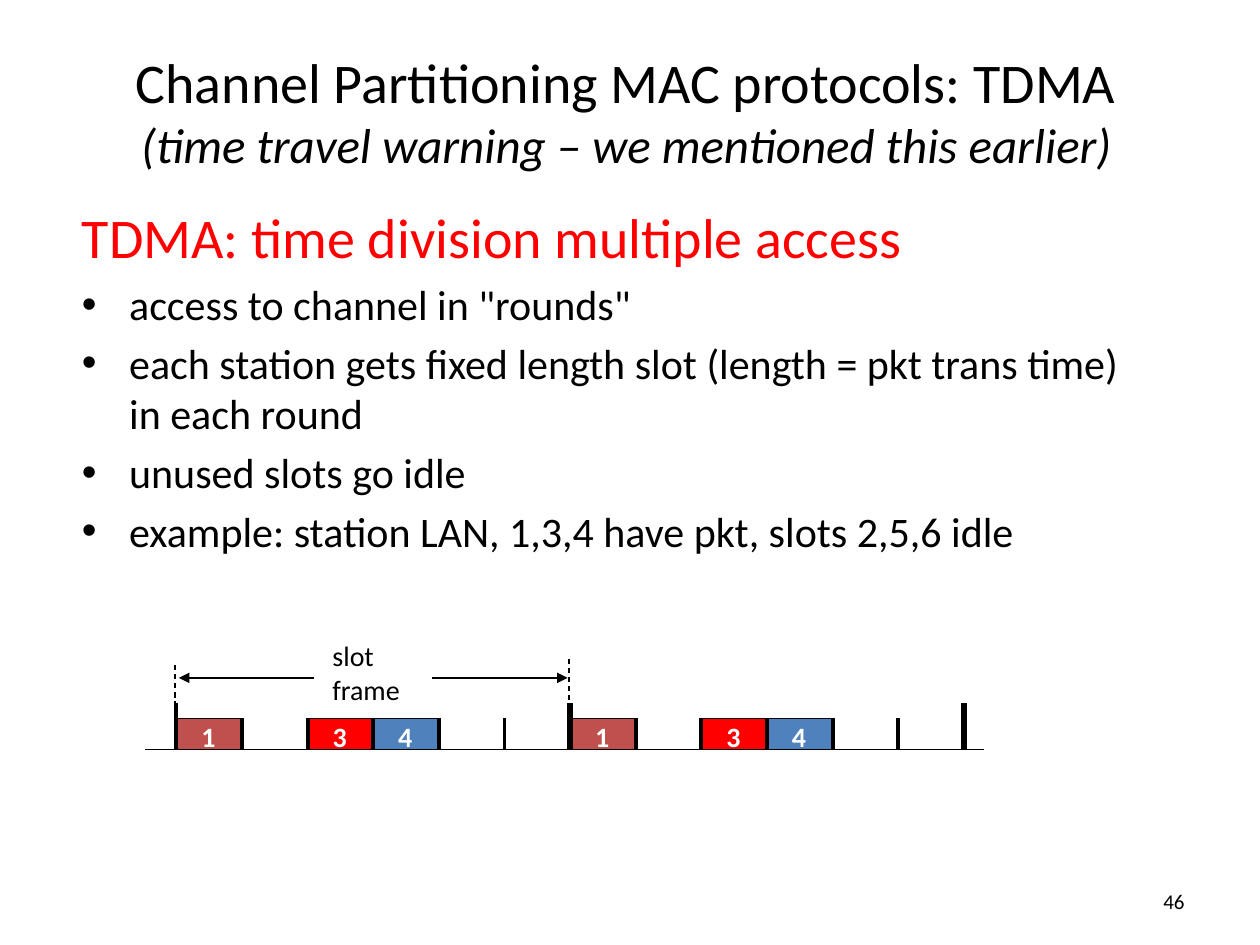
from dataclasses import dataclass

from lxml.etree import SubElement
from pptx import Presentation
from pptx.dml.color import RGBColor as RGB
from pptx.enum.dml import MSO_LINE
from pptx.enum.shapes import MSO_CONNECTOR as CONN, MSO_SHAPE as SHAPE
from pptx.enum.text import MSO_ANCHOR as ANCHOR, MSO_AUTO_SIZE as FIT, PP_ALIGN as ALIGN
from pptx.oxml.ns import qn
from pptx.util import Inches, Pt


@dataclass(frozen=True)
class Theme:
    """Colours, font and type sizes of the slide."""
    font: str = "Calibri"
    ink: RGB = RGB(0, 0, 0)
    white: RGB = RGB(255, 255, 255)
    red: RGB = RGB(255, 0, 0)
    brick: RGB = RGB(0xC0, 0x50, 0x4D)
    blue: RGB = RGB(0x4F, 0x81, 0xBD)
    head: int = 32
    sub: int = 28
    body: int = 24
    label: int = 16
    number: int = 12
    thin: float = 0.75
    tick: float = 2.25
    edge: float = 3


T = Theme()
START, FRAME, SLOTS, ROUNDS = 1.4, 3.125, 6, 2
PITCH = FRAME / SLOTS
BASE, SLOT_H, EDGE_H = 5.95, 0.25, 0.37
BUSY = {1: T.brick, 3: T.red, 4: T.blue}
BULLETS = (
    'access to channel in "rounds"',
    "each station gets fixed length slot (length = pkt trans time) in each round",
    "unused slots go idle",
    "example: station LAN, 1,3,4 have pkt, slots 2,5,6 idle",
)


def slot_x(i):
    """Return the left edge of slot i on the time axis."""
    return START + i * PITCH


def add_run(p, text, size, color=T.ink, bold=None, italic=None):
    """Add one formatted run to a paragraph."""
    r = p.add_run()
    r.text = text
    f = r.font
    f.name, f.size, f.bold, f.italic = T.font, Pt(size), bold, italic
    f.color.rgb = color


def place(sp, x, y, w, h):
    """Move and size a shape in inches."""
    sp.left, sp.top, sp.width, sp.height = map(Inches, (x, y, w, h))


def add_text(s, box, lines, size, color=T.ink, bold=None, align=ALIGN.LEFT, wrap=False):
    """Add a text box with one paragraph per line."""
    tf = s.shapes.add_textbox(*map(Inches, box)).text_frame
    tf.word_wrap = wrap
    for i, line in enumerate(lines):
        p = tf.add_paragraph() if i else tf.paragraphs[0]
        p.alignment = align
        add_run(p, line, size, color, bold)
    return tf


def add_line(s, x1, y1, x2, y2, width=T.thin, dash=None, arrow=False):
    """Add a black straight line, optionally dashed or with an arrowhead."""
    c = s.shapes.add_connector(CONN.STRAIGHT, *map(Inches, (x1, y1, x2, y2)))
    c.line.color.rgb = T.ink
    c.line.width = Pt(width)
    if dash:
        c.line.dash_style = dash
    if arrow:
        SubElement(c.line._get_or_add_ln(), qn("a:tailEnd"), type="triangle")
    SubElement(c._element.spPr, qn("a:effectLst"))


def add_slot(s, i, station, color):
    """Add a busy slot with its station number."""
    x = slot_x(i)
    box = (x, BASE - SLOT_H, PITCH, SLOT_H)
    sp = s.shapes.add_shape(SHAPE.RECTANGLE, *map(Inches, box))
    sp.shadow.inherit = False
    sp.fill.solid()
    sp.fill.fore_color.rgb = color
    sp.line.color.rgb = T.ink
    sp.line.width = Pt(T.thin)
    add_text(s, (x + 0.1, 5.66, 0.33, 0.37), [str(station)], T.label, T.white, True)


def fill_title(sp):
    """Fill the title placeholder with the heading and its aside."""
    place(sp, 0.25, 0.25, 9.44, 1.25)
    tf = sp.text_frame
    tf.vertical_anchor = ANCHOR.MIDDLE
    p = tf.paragraphs[0]
    p.alignment = ALIGN.CENTER
    add_run(p, "Channel Partitioning MAC protocols: TDMA", T.head)
    p.add_line_break()
    SubElement(p._p[-1], qn("a:rPr"), sz=str(T.head * 100))
    add_run(p, "(time travel warning – we mentioned this earlier)", T.sub, italic=True)


def fill_body(sp):
    """Fill the body placeholder with a red lead line and bullets."""
    place(sp, 0.55, 1.56, 8.5, 3.2)
    tf = sp.text_frame
    tf.auto_size = FIT.NONE
    p = tf.paragraphs[0]
    SubElement(p._p.get_or_add_pPr(), qn("a:buNone"))
    add_run(p, "TDMA: time division multiple access", T.head, T.red)
    for text in BULLETS:
        add_run(tf.add_paragraph(), text, T.body)


def draw_timeline(s):
    """Draw two rounds of slots on the time axis."""
    add_line(s, 1.15, BASE, 7.81, BASE)
    for n in range(ROUNDS):
        for station, color in BUSY.items():
            add_slot(s, n * SLOTS + station - 1, station, color)
    for i in range(ROUNDS * SLOTS + 1):
        edge = i % SLOTS == 0
        height = EDGE_H if edge else SLOT_H
        width = T.edge if edge and i else T.tick
        add_line(s, slot_x(i), BASE - height, slot_x(i), BASE, width)


def draw_frame_span(s):
    """Mark the length of one slot frame above the axis."""
    left, right, y = START, START + FRAME, 5.38
    add_text(s, (2.54, 5.02, 0.78, 0.64), ["slot", "frame"], T.label)
    add_line(s, 3.43, y, right - 0.02, y, arrow=True)
    add_line(s, 2.49, y, left + 0.02, y, arrow=True)
    for x, top in ((left, 5.28), (right, 5.23)):
        add_line(s, x - 0.01, top, x - 0.01, top + 0.33, dash=MSO_LINE.DASH)


def main():
    """Build and save the slide."""
    prs = Presentation()
    prs.slide_width, prs.slide_height = Inches(10), Inches(7.5)
    s = prs.slides.add_slide(prs.slide_layouts[1])
    fill_title(s.shapes.title)
    fill_body(s.placeholders[1])
    draw_timeline(s)
    draw_frame_span(s)
    tf = add_text(s, (7.17, 6.95, 2.33, 0.4), ["46"], T.number, align=ALIGN.RIGHT, wrap=True)
    tf.vertical_anchor = ANCHOR.MIDDLE
    prs.save("out.pptx")


if __name__ == "__main__":
    main()
